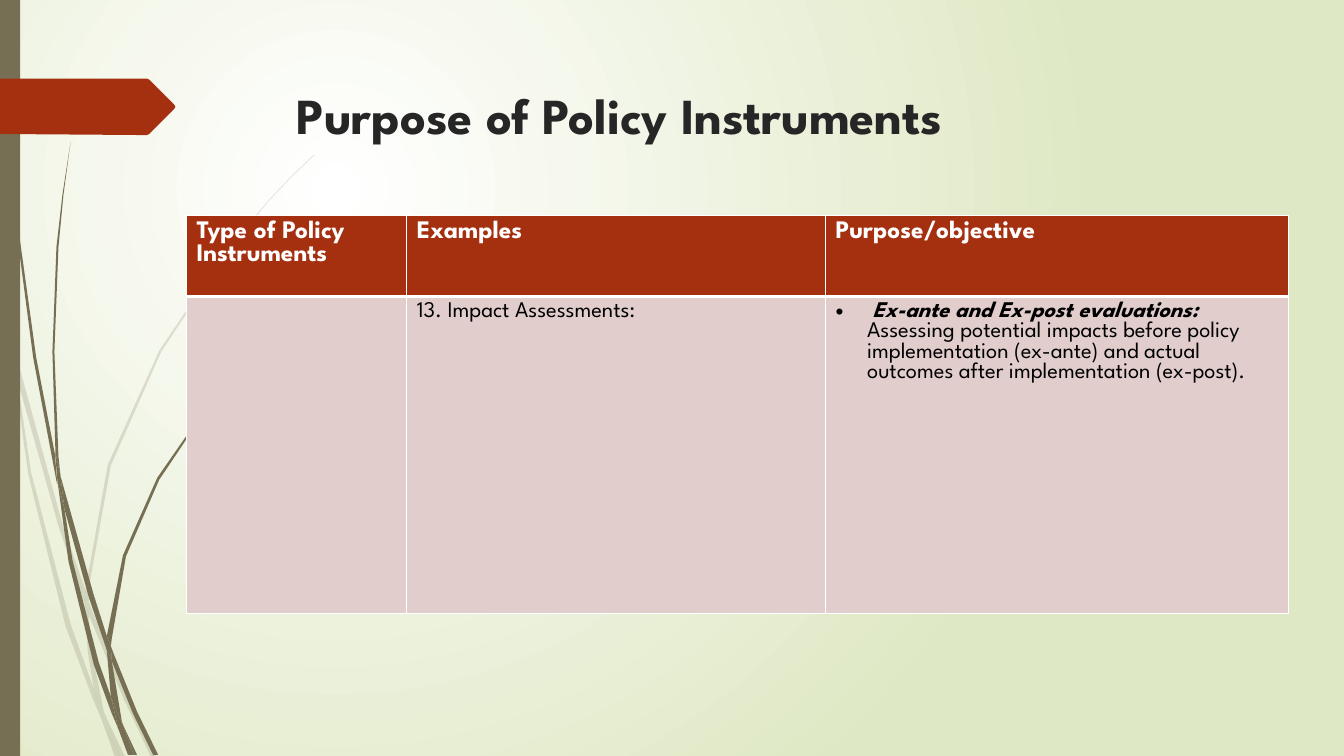
from lxml.etree import SubElement
from pptx import Presentation
from pptx.dml.color import RGBColor
from pptx.enum.shapes import MSO_SHAPE
from pptx.enum.text import MSO_ANCHOR
from pptx.oxml.ns import qn
from pptx.util import Pt

FONT = "League Spartan"
OLIVE, RUST, ROSE, WHITE, BLACK = "766F54", "A53010", "E1CDCC", "FFFFFF", "000000"
UNIT = Pt(0.72)

PALE_GRASS = [
    [(11, 350), (9, 322), (0, 282), (0, 299), (10, 344)],
    [(58, 522), (84, 599), (85, 586), (62, 520), (14, 345), (17, 376)],
    [(92, 607), (88, 596), (88, 610), (123, 694), (150, 751), (155, 751), (127, 692)],
    [(119, 751), (124, 751), (105, 711)],
    [(93, 683), (70, 619), (31, 469), (17, 376), (11, 350), (28, 470), (65, 621),
     (92, 693), (101, 714), (99, 707)],
    [(84, 599), (87, 646), (93, 683), (96, 692), (105, 711), (103, 706), (91, 646),
     (88, 610), (88, 608)],
    [(88, 584), (110, 462), (160, 349), (229, 245), (268, 198), (290, 175), (312, 154),
     (312, 153), (289, 175), (268, 197), (228, 244), (158, 348), (107, 461), (85, 584),
     (85, 586), (88, 596)],
    [(101, 714), (114, 751), (119, 751)],
    [(88, 608), (88, 610), (88, 596), (85, 586), (84, 599)],
    [(96, 692), (93, 683), (99, 707), (101, 714), (119, 751), (105, 711)],
]

DARK_GRASS = [
    [(7, 110), (17, 233), (33, 355), (56, 477), (57, 481), (55, 457), (55, 453),
     (36, 355), (19, 232), (8, 109), (5, 48), (4, 0), (3, 0), (4, 48)],
    [(88, 592), (106, 645), (106, 633), (106, 631), (93, 590), (60, 472), (64, 505)],
    [(113, 649), (110, 641), (111, 656), (132, 708), (152, 749), (157, 749), (136, 706)],
    [(110, 691), (98, 657), (72, 556), (64, 505), (57, 477), (68, 557), (93, 659),
     (111, 708), (117, 722), (116, 717)],
    [(60, 472), (58, 453), (54, 349), (58, 245), (63, 193), (70, 141), (62, 193),
     (56, 245), (52, 349), (55, 449)],
    [(133, 749), (136, 749), (122, 719)],
    [(57, 477), (64, 505), (60, 472), (55, 449), (55, 453)],
    [(111, 633), (125, 552), (158, 476), (205, 406), (231, 374), (245, 359), (261, 344),
     (260, 344), (245, 358), (231, 373), (204, 405), (156, 474), (122, 551), (106, 631),
     (110, 641)],
    [(117, 722), (127, 749), (131, 749)],
    [(106, 645), (110, 691), (116, 706), (122, 719), (121, 716), (111, 656), (109, 651)],
    [(106, 645), (109, 651), (111, 656), (110, 641), (106, 631), (106, 633)],
    [(116, 706), (110, 691), (116, 717), (117, 722), (130, 749), (133, 749), (122, 719)],
]

ARROW = [(173, 108), (148, 133), (146, 134), (136, 134), (0, 133), (0, 78), (146, 78),
         (148, 79), (173, 104), (174, 106)]

HEADERS = ["Type of Policy Instruments", "Examples", "Purpose/objective"]
BODY = [
    [],
    [("13. Impact Assessments:", False)],
    [(" ", False), ("Ex-ante and Ex-post evaluations: ", True),
     ("Assessing potential impacts before policy implementation (ex-ante) and actual "
      "outcomes after implementation (ex-post).", False)],
]


def rgb(color):
    return RGBColor.from_string(color)


def paint(shape, color, alpha=100):
    shape.fill.solid()
    shape.fill.fore_color.rgb = rgb(color)
    shape.line.fill.background()
    shape.shadow.inherit = False
    if alpha < 100:
        clr = shape._element.spPr.find(qn("a:solidFill"))[0]
        SubElement(clr, qn("a:alpha"), val=str(alpha * 1000))


def add_run(p, text, size, color, bold=False, italic=False):
    r = p.add_run()
    r.text = text
    r.font.name = FONT
    r.font.size = Pt(size)
    r.font.color.rgb = rgb(color)
    r.font.bold = bold
    r.font.italic = italic


def add_background(s):
    fill = s.background.fill
    fill.gradient()
    for stop, color, pos in zip(fill.gradient_stops, (WHITE, "DFE8C4"), (0, 1)):
        stop.color.rgb = rgb(color)
        stop.position = pos
    grad = s._element.find(".//" + qn("a:gradFill"))
    grad.remove(grad.find(qn("a:lin")))
    circle = SubElement(grad, qn("a:path"), path="circle")
    SubElement(circle, qn("a:fillToRect"), l="50000", t="50000", r="100000", b="100000")


def add_outline(shapes, points, x, y, color, alpha=100):
    builder = shapes.build_freeform(*points[0], scale=UNIT)
    builder.add_line_segments(points[1:], close=True)
    paint(builder.convert_to_shape(Pt(x), Pt(y)), color, alpha)


def add_decoration(s, x, y, h):
    for blades, alpha in ((PALE_GRASS, 20), (DARK_GRASS, 100)):
        grp = s.shapes.add_group_shape()
        for blade in blades:
            add_outline(grp.shapes, blade, x, y, OLIVE, alpha)
    bar = s.shapes.add_shape(MSO_SHAPE.RECTANGLE, Pt(x), Pt(y), Pt(14.4), Pt(h))
    paint(bar, OLIVE)
    add_outline(s.shapes, ARROW, x, y, RUST)


def add_title(s, x, y, w, h):
    title = s.shapes.title
    title.left, title.top, title.width, title.height = Pt(x), Pt(y), Pt(w), Pt(h)
    tf = title.text_frame
    tf.word_wrap = True
    tf.vertical_anchor = MSO_ANCHOR.MIDDLE
    tf.margin_bottom = Pt(10)
    p = tf.paragraphs[0]
    pPr = p._p.get_or_add_pPr()
    pPr.set("algn", "l")
    add_run(p, "Purpose of Policy Instruments", 36, "262626", bold=True)


def add_bullet(p, indent):
    pPr = p._p.get_or_add_pPr()
    pPr.set("marL", str(Pt(indent)))
    pPr.set("indent", str(-Pt(indent)))
    SubElement(pPr, qn("a:buFont"), typeface="Arial")
    SubElement(pPr, qn("a:buChar"), char="•")


def format_cell(cell, color, top, bottom):
    tcPr = cell._tc.get_or_add_tcPr()
    for side, width in (("lnL", 1), ("lnR", 1), ("lnT", top), ("lnB", bottom)):
        ln = SubElement(tcPr, qn("a:" + side), w=str(Pt(width)))
        SubElement(SubElement(ln, qn("a:solidFill")), qn("a:srgbClr"), val=WHITE)
    cell.fill.solid()
    cell.fill.fore_color.rgb = rgb(color)


def add_instruments_table(s, x, y, w, h):
    frame = s.shapes.add_table(2, len(HEADERS), Pt(x), Pt(y), Pt(w), Pt(h))
    tbl = frame.table
    tbl.horz_banding = False
    for col, share in zip(tbl.columns, (0.2, 0.38, 0.42)):
        col.width = Pt(round(w * share, 1))
    header_h = 57.6
    tbl.rows[0].height = Pt(header_h)
    tbl.rows[1].height = Pt(h - header_h)
    for i, (header, runs) in enumerate(zip(HEADERS, BODY)):
        head, body = tbl.cell(0, i), tbl.cell(1, i)
        format_cell(head, RUST, 1, 3)
        format_cell(body, ROSE, 3, 1)
        add_run(head.text_frame.paragraphs[0], header, 18, WHITE, bold=True)
        p = body.text_frame.paragraphs[0]
        if len(runs) > 1:
            add_bullet(p, 22.5)
        for text, strong in runs:
            add_run(p, text, 16, BLACK, strong, strong)


def main():
    prs = Presentation()
    prs.slide_width, prs.slide_height = Pt(960), Pt(540)
    s = prs.slides.add_slide(prs.slide_layouts[5])
    add_background(s)
    add_decoration(s, 0, 0, 540)
    add_title(s, 204.5, 49, 702, 71.3)
    add_instruments_table(s, 133.2, 154.1, 787.2, 284.4)
    prs.save("out.pptx")


if __name__ == "__main__":
    main()
